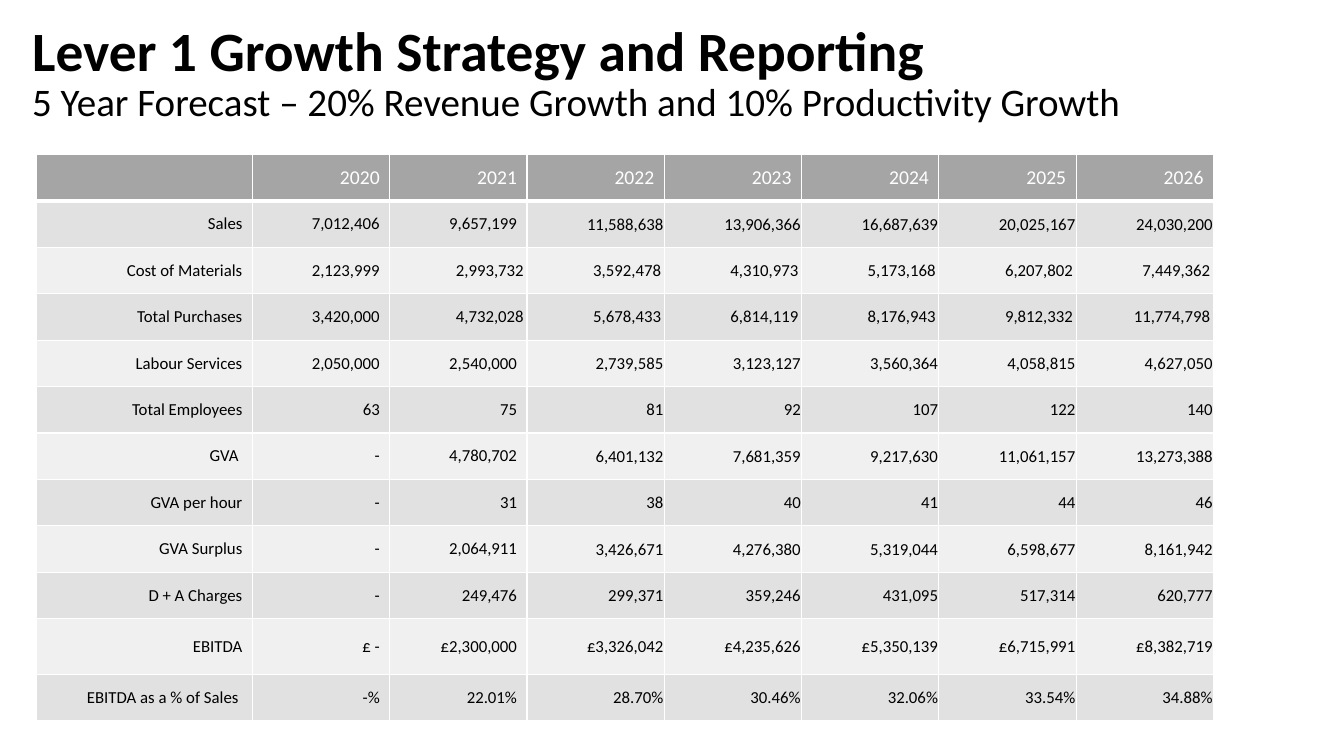
from copy import deepcopy
from dataclasses import dataclass

from lxml.etree import SubElement
from pptx import Presentation
from pptx.dml.color import RGBColor as Rgb
from pptx.enum.text import MSO_ANCHOR as Anchor, MSO_AUTO_SIZE as AutoSize, PP_ALIGN as Align
from pptx.oxml.ns import qn
from pptx.slide import Slide
from pptx.table import Table, _Cell as Cell
from pptx.text.text import Font
from pptx.util import Cm, Pt


@dataclass(frozen=True)
class Theme:
    font: str = "Calibri"
    ink: str = "000000"
    grid: str = "FFFFFF"
    header_ink: str = "FFFFFF"
    header_fill: str = "A5A5A5"
    bands: tuple[str, str] = ("E1E1E1", "F0F0F0")
    heading_size: float = 39.6
    subheading_size: float = 27.9
    header_size: float = 14
    body_size: float = 12
    grid_width: float = 1
    header_rule_width: float = 3


@dataclass(frozen=True)
class Insets:
    left: float
    top: float
    right: float
    bottom: float


@dataclass(frozen=True)
class Measure:
    label: str
    values: tuple[str, ...]
    insets: Insets
    height: float = 1.17
    first_inset_column: int = 3


THEME = Theme()
ROOMY = Insets(0.25, 0.13, 0.25, 0.13)
TIGHT = Insets(0.02, 0.02, 0.02, 0)
NARROW = Insets(0.08, 0, 0.08, 0)
LABEL_WIDTH, YEAR_WIDTH = 5.44, 3.46

YEARS = Measure("", tuple(str(year) for year in range(2020, 2027)), ROOMY)
FORECAST = (
    Measure("Sales", ("7,012,406", "9,657,199", "11,588,638", "13,906,366",
                      "16,687,639", "20,025,167", "24,030,200"), TIGHT),
    Measure("Cost of Materials", ("2,123,999", "2,993,732", "3,592,478", "4,310,973",
                                  "5,173,168", "6,207,802", "7,449,362"),
            NARROW, first_inset_column=2),
    Measure("Total Purchases", ("3,420,000", "4,732,028", "5,678,433", "6,814,119",
                                "8,176,943", "9,812,332", "11,774,798"),
            NARROW, first_inset_column=2),
    Measure("Labour Services", ("2,050,000", "2,540,000", "2,739,585", "3,123,127",
                                "3,560,364", "4,058,815", "4,627,050"), TIGHT),
    Measure("Total Employees", ("63", "75", "81", "92", "107", "122", "140"), TIGHT),
    Measure("GVA ", ("-", "4,780,702", "6,401,132", "7,681,359",
                     "9,217,630", "11,061,157", "13,273,388"), TIGHT),
    Measure("GVA per hour", ("-", "31", "38", "40", "41", "44", "46"), TIGHT),
    Measure("GVA Surplus", ("-", "2,064,911", "3,426,671", "4,276,380",
                            "5,319,044", "6,598,677", "8,161,942"), TIGHT),
    Measure("D + A Charges", ("-", "249,476", "299,371", "359,246",
                              "431,095", "517,314", "620,777"), TIGHT),
    Measure("EBITDA", ("£ -", "£2,300,000", "£3,326,042", "£4,235,626",
                       "£5,350,139", "£6,715,991", "£8,382,719"), TIGHT, height=1.4),
    Measure("EBITDA as a % of Sales ", ("-%", "22.01%", "28.70%", "30.46%",
                                        "32.06%", "33.54%", "34.88%"), TIGHT),
)


def style_font(font: Font, size: float, color: str, bold: bool = False) -> None:
    font.name = THEME.font
    font.size = Pt(size)
    font.bold = bold
    font.color.rgb = Rgb.from_string(color)


def write_title(slide: Slide, heading: str, subheading: str) -> None:
    title = slide.shapes.title
    title.left, title.top, title.width, title.height = Cm(0), Cm(0.03), Cm(29.21), Cm(3.68)
    frame = title.text_frame
    frame.auto_size = AutoSize.NONE
    frame.word_wrap = True
    frame.vertical_anchor = Anchor.MIDDLE
    frame.margin_left = Cm(0.81)
    paragraph = frame.paragraphs[0]
    paragraph.text = f"{heading}\v{subheading}"
    paragraph.alignment = Align.LEFT
    paragraph.line_spacing = 0.9
    heading_run, subheading_run = paragraph.runs
    style_font(heading_run.font, THEME.heading_size, THEME.ink, bold=True)
    style_font(subheading_run.font, THEME.subheading_size, THEME.ink)
    paragraph._p.find(qn("a:br")).append(deepcopy(heading_run._r.rPr))


def draw_borders(cell: Cell, bottom_width: float) -> None:
    properties = cell._tc.get_or_add_tcPr()
    for side in "LRTB":
        width = bottom_width if side == "B" else THEME.grid_width
        border = SubElement(properties, qn(f"a:ln{side}"), w=str(Pt(width)))
        SubElement(SubElement(border, qn("a:solidFill")), qn("a:srgbClr"), val=THEME.grid)


def fill_cell(cell: Cell, text: str, insets: Insets, fill: str, ink: str,
              size: float, bottom_width: float) -> None:
    draw_borders(cell, bottom_width)
    cell.fill.solid()
    cell.fill.fore_color.rgb = Rgb.from_string(fill)
    cell.vertical_anchor = Anchor.MIDDLE
    cell.margin_left, cell.margin_top = Cm(insets.left), Cm(insets.top)
    cell.margin_right, cell.margin_bottom = Cm(insets.right), Cm(insets.bottom)
    paragraph = cell.text_frame.paragraphs[0]
    paragraph.text = text
    paragraph.alignment = Align.RIGHT
    for run in paragraph.runs:
        style_font(run.font, size, ink)


def fill_row(table: Table, index: int, measure: Measure) -> None:
    table.rows[index].height = Cm(measure.height)
    if index == 0:
        look = (THEME.header_fill, THEME.header_ink, THEME.header_size, THEME.header_rule_width)
    else:
        look = (THEME.bands[(index - 1) % 2], THEME.ink, THEME.body_size, THEME.grid_width)
    for column, text in enumerate((measure.label, *measure.values)):
        insets = measure.insets if column >= measure.first_inset_column else ROOMY
        fill_cell(table.cell(index, column), text, insets, *look)


def add_forecast(slide: Slide) -> None:
    measures = (YEARS, *FORECAST)
    widths = [LABEL_WIDTH] + [YEAR_WIDTH] * len(YEARS.values)
    height = sum(measure.height for measure in measures)
    table = slide.shapes.add_table(len(measures), len(widths), Cm(0.92), Cm(3.89),
                                   Cm(sum(widths)), Cm(height)).table
    for column, width in zip(table.columns, widths):
        column.width = Cm(width)
    for index, measure in enumerate(measures):
        fill_row(table, index, measure)


def main() -> None:
    deck = Presentation()
    deck.slide_width, deck.slide_height = Cm(33.87), Cm(19.05)
    slide = deck.slides.add_slide(deck.slide_layouts.get_by_name("Title Only"))
    write_title(slide, "Lever 1 Growth Strategy and Reporting",
                "5 Year Forecast – 20% Revenue Growth and 10% Productivity Growth")
    add_forecast(slide)
    deck.save("out.pptx")


if __name__ == "__main__":
    main()
